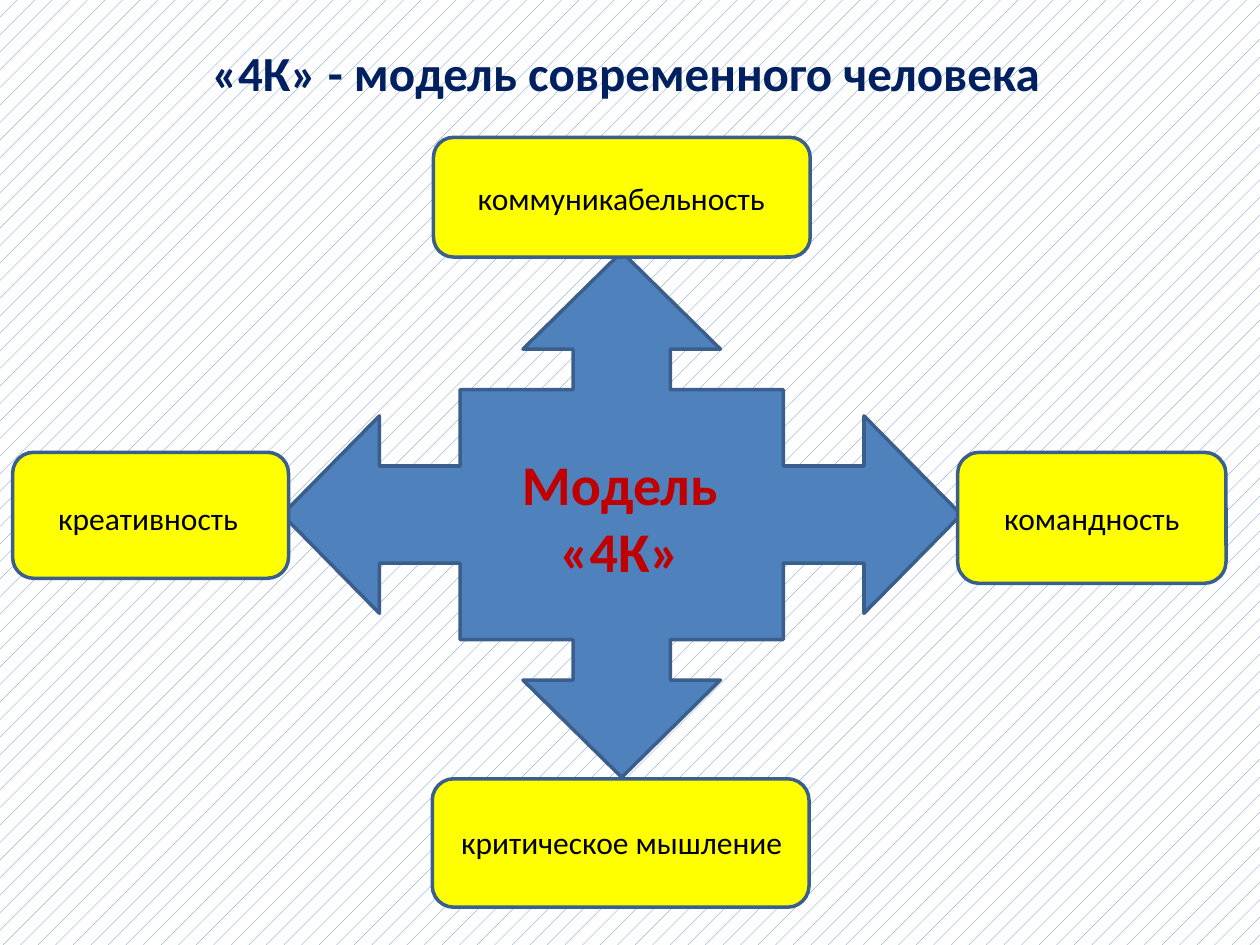
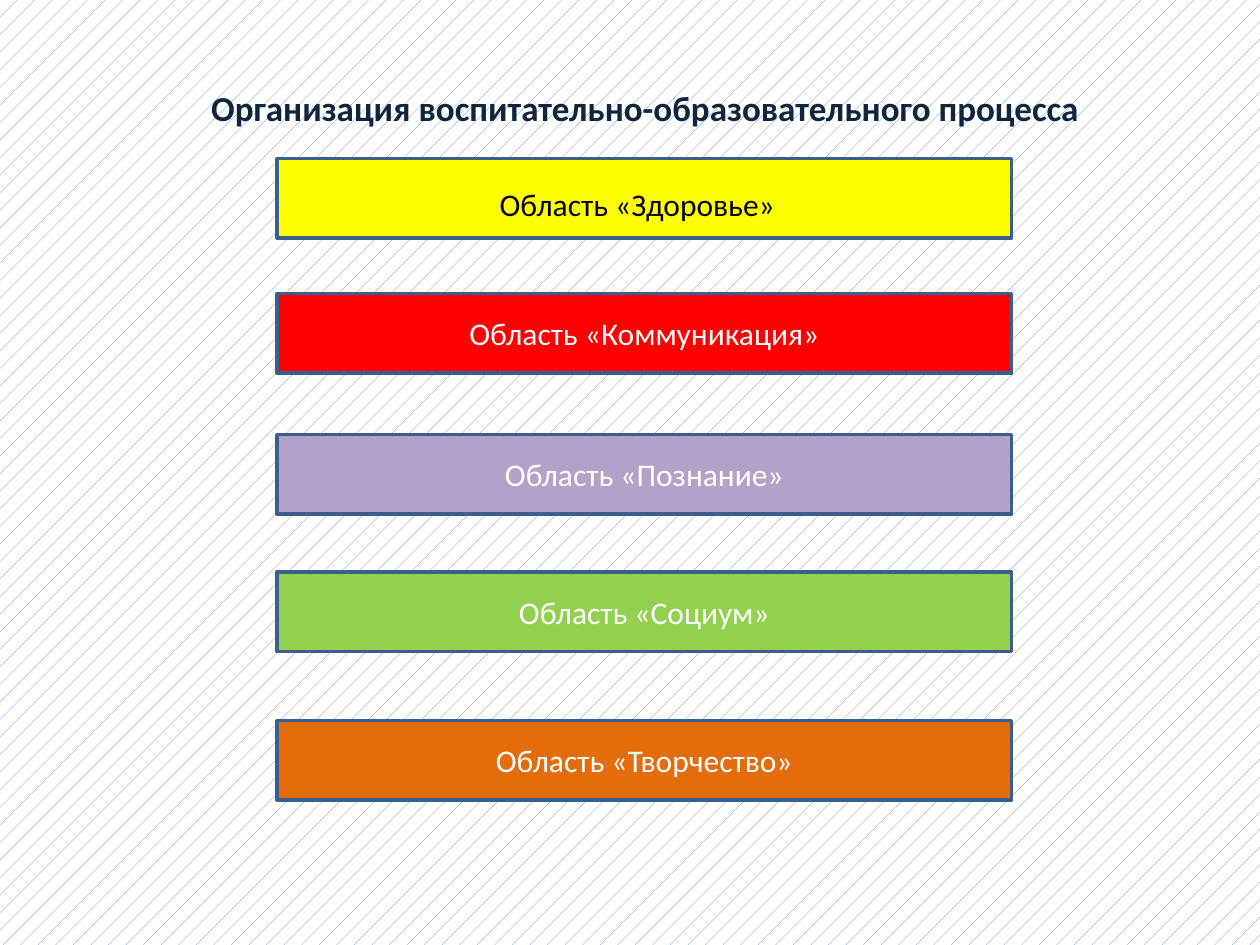
from pptx import Presentation
from pptx.dml.color import RGBColor
from pptx.enum.dml import MSO_PATTERN
from pptx.enum.shapes import MSO_SHAPE
from pptx.enum.text import MSO_ANCHOR, MSO_AUTO_SIZE, PP_ALIGN
from pptx.util import Pt

DOTS = MSO_PATTERN.PERCENT_5
CALLOUT = MSO_SHAPE.QUAD_ARROW_CALLOUT
ROUNDED = MSO_SHAPE.FLOWCHART_ALTERNATE_PROCESS
BAR = MSO_SHAPE.RECTANGLE
CENTER, RIGHT = PP_ALIGN.CENTER, PP_ALIGN.RIGHT
MIDDLE = MSO_ANCHOR.MIDDLE
GROW = MSO_AUTO_SIZE.SHAPE_TO_FIT_TEXT

FONT = "Calibri"
BLUE, OUTLINE = "4F81BD", "3A5F8C"
YELLOW, WHITE, BLACK = "FFFF00", "FFFFFF", "000000"

QUALITIES = [
    ("коммуникабельность", (247.7, 78.5, 215.3, 68.4), (258.5, 98.6, 193, 29)),
    ("критическое мышление", (247, 445, 215.3, 73.4), (253.4, 466.6, 203.8, 29)),
    ("командность", (547.2, 258.5, 153.4, 74.9), (547.2, 281.5, 153.4, 29)),
    ("креативность", (7.2, 258.5, 157.7, 72), (10.8, 281.5, 147.6, 29)),
]
AREAS = [
    ("Область «Коммуникация»", 167.8, "FF0000"),
    ("Область «Познание»", 248.4, "B3A2C7"),
    ("Область «Социум»", 326.9, "92D050"),
    ("Область «Творчество»", 411.8, "E46C0A"),
]


def rgb(color):
    """Turn a hex string into a colour."""
    return RGBColor.from_string(color)


def write(frame, lines, size, color, bold=False, align=CENTER):
    """Write one paragraph per line into a text frame."""
    frame.word_wrap = True
    for index, line in enumerate(lines):
        paragraph = frame.paragraphs[0] if index == 0 else frame.add_paragraph()
        paragraph.alignment = align
        run = paragraph.add_run()
        run.text = line
        run.font.name = FONT
        run.font.size = Pt(size)
        run.font.bold = bold
        run.font.color.rgb = rgb(color)


def add_label(slide, box, lines, size=18, color=BLACK, bold=False, align=CENTER):
    """Place text that stands free of any shape."""
    label = slide.shapes.add_textbox(*map(Pt, box))
    write(label.text_frame, lines, size, color, bold, align)
    label.text_frame.auto_size = GROW


def add_block(slide, kind, box, fill):
    """Add an outlined, filled shape without a shadow."""
    block = slide.shapes.add_shape(kind, *map(Pt, box))
    block.shadow.inherit = False
    block.fill.solid()
    block.fill.fore_color.rgb = rgb(fill)
    block.line.color.rgb = rgb(OUTLINE)
    block.line.width = Pt(2)
    return block


def add_area(slide, top, fill, name=None):
    """Add one bar of the list of areas."""
    area = add_block(slide, BAR, (158.4, top, 419.6, 45.4), fill)
    if name:
        write(area.text_frame, [name], 18, WHITE)
        area.text_frame.vertical_anchor = MIDDLE


def add_patterned_slide(deck):
    """Add a blank slide with the shared background pattern."""
    slide = deck.slides.add_slide(deck.slide_layouts[6])
    backdrop = slide.background.fill
    backdrop.patterned()
    backdrop.pattern = DOTS
    backdrop.fore_color.rgb = rgb(BLUE)
    backdrop.back_color.rgb = rgb(WHITE)
    return slide


def build_model(deck):
    """Build the slide with four qualities around the model."""
    slide = add_patterned_slide(deck)
    hub = add_block(slide, CALLOUT, (161.3, 144, 388, 300.2), BLUE)
    for index, ratio in enumerate((0.185, 0.188, 0.185, 0.476)):
        hub.adjustments[index] = ratio
    add_label(slide, (275, 253.4, 158.4, 85), ["Модель", "«4К»"], 32, "C00000", True)
    for _, card, _ in QUALITIES:
        add_block(slide, ROUNDED, card, YELLOW)
    for quality, _, place in QUALITIES:
        add_label(slide, place, [quality])
    add_label(slide, (59.8, 20.9, 595.4, 41),
              ["«4К» - модель современного человека"], 28, "002060", True)


def build_areas(deck):
    """Build the slide that lists the areas of the process."""
    slide = add_patterned_slide(deck)
    add_label(slide, (42.5, 46.1, 652.3, 31.7),
              ["Организация воспитательно-образовательного процесса"],
              20, "0F243E", True)
    add_area(slide, 90.7, YELLOW)
    for name, top, fill in AREAS:
        add_area(slide, top, fill, name)
    add_label(slide, (54, 102.2, 396, 29), ["Область «Здоровье»"], align=RIGHT)


def main():
    """Build and save the deck."""
    deck = Presentation()
    deck.slide_width, deck.slide_height = Pt(720), Pt(540)
    build_model(deck)
    build_areas(deck)
    deck.save("out.pptx")


if __name__ == "__main__":
    main()
